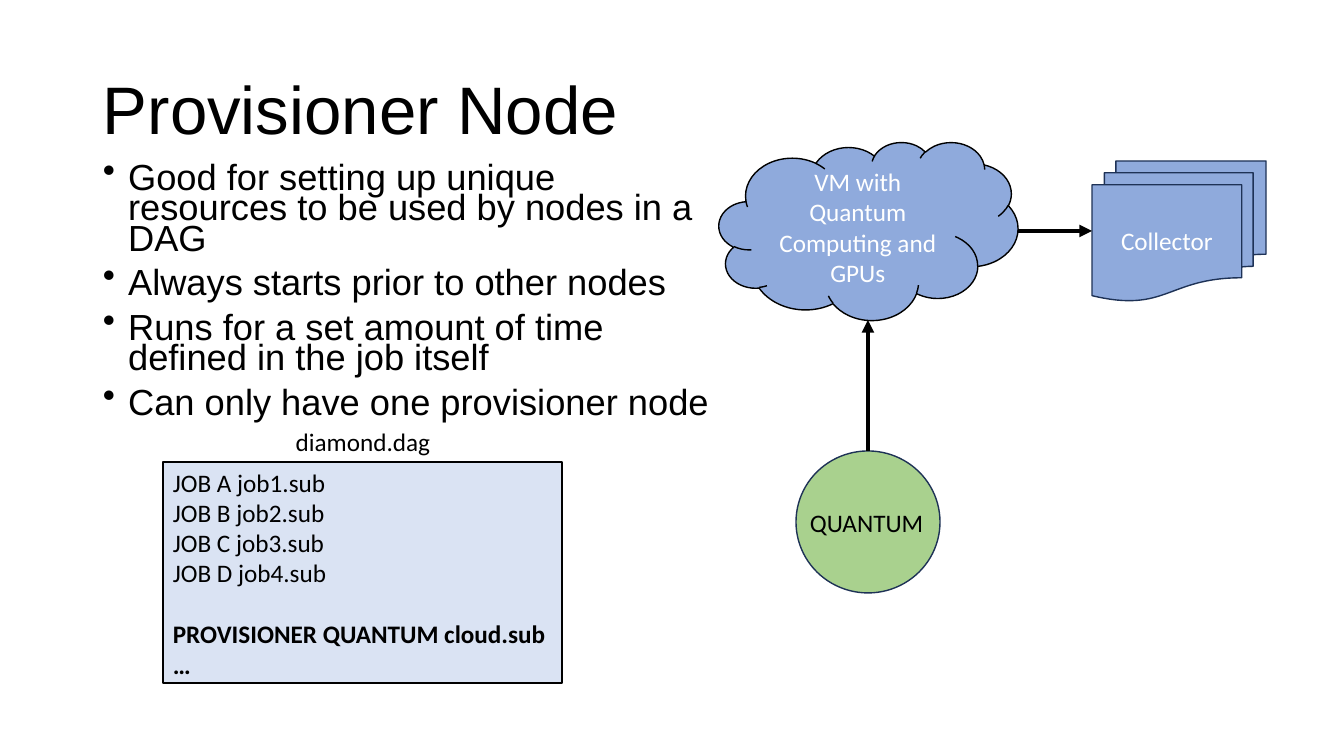
import pptx
import pptx.util
import pptx.dml.color
import pptx.enum.shapes
import pptx.enum.text
import pptx.oxml
import pptx.oxml.ns

SHAPE = pptx.enum.shapes.MSO_SHAPE
ALIGN = pptx.enum.text.PP_ALIGN
ANCHOR = pptx.enum.text.MSO_ANCHOR
Pt = pptx.util.Pt

# Content
TITLE = "Provisioner Node"
POINTS = [
    "Good for setting up unique resources to be used by nodes in a DAG",
    "Always starts prior to other nodes",
    "Runs for a set amount of time defined in the job itself",
    "Can only have one provisioner node",
]
FILE = "diamond.dag"
JOBS = ["JOB A job1.sub", "JOB B job2.sub", "JOB C job3.sub", "JOB D job4.sub"]
EXTRA = ["PROVISIONER QUANTUM cloud.sub", "…"]
CLOUD = "VM with Quantum Computing and GPUs"
STORE = "Collector"
NODE = "QUANTUM"

# Colours
BLACK, WHITE, NAVY = "000000", "FFFFFF", "1E3256"
BLUE, PALE, GREEN = "8FAADC", "DAE3F3", "A9D18E"

# Boxes in px: left, top, width, height
SIZE = (1344, 756)
TITLE_BOX = (93, 40, 1159, 146)
POINT_BOX = (93, 161, 633, 268)
CODE_BOX = (163, 462, 399, 221)
FILE_BOX = (237, 421, 252, 40)
CLOUD_BOX = (719, 142, 299, 178)
STORE_BOX = (1092, 161, 174, 140)
NODE_BOX = (796, 451, 144, 142)
LABEL_BOX = (800, 502, 143, 40)

SCALE = 914400 / 100.8


def emu(*px):
    return [round(v * SCALE) for v in px]


def color(code):
    return pptx.dml.color.RGBColor.from_string(code)


def write(shape, lines, size=18, face="Calibri", ink=BLACK,
          align=ALIGN.LEFT, anchor=ANCHOR.TOP):
    frame = shape.text_frame
    frame.word_wrap = True
    frame.vertical_anchor = anchor
    frame.text = "\n".join(lines)
    for para in frame.paragraphs:
        para.alignment = align
        para.font.size = Pt(size)
        para.font.name = face
        para.font.color.rgb = color(ink)
    return frame.paragraphs


def label(box, lines, **style):
    return write(slide.shapes.add_textbox(*emu(*box)), lines, **style)


def block(kind, box, fill, line):
    shape = slide.shapes.add_shape(kind, *emu(*box))
    shape.shadow.inherit = False
    shape.fill.solid()
    shape.fill.fore_color.rgb = color(fill)
    shape.line.color.rgb = color(line)
    shape.line.width = Pt(1)
    return shape


def child(parent, tag, **attrs):
    node = pptx.oxml.ns.qn(tag)
    item = parent.makeelement(node, attrs)
    parent.append(item)


def arrow(start, end):
    link = slide.shapes.add_connector(
        pptx.enum.shapes.MSO_CONNECTOR.STRAIGHT, *emu(*start, *end))
    link.line.color.rgb = color(BLACK)
    link.line.width = Pt(3)
    child(link.line._get_or_add_ln(), "a:tailEnd", type="triangle")
    child(link._element.spPr, "a:effectLst")
    return link


deck = pptx.Presentation()
deck.slide_width, deck.slide_height = emu(*SIZE)
slide = deck.slides.add_slide(deck.slide_layouts[6])

# Title and bullet points
label(TITLE_BOX, [TITLE], size=48, face="Arial", anchor=ANCHOR.MIDDLE)[0].line_spacing = 0.9
for i, para in enumerate(label(POINT_BOX, POINTS, size=25.9, face="Arial")):
    para.line_spacing = 0.7
    para.space_before = Pt(10 if i else 0)
    props = para._p.get_or_add_pPr()
    props.set("marL", "228600")
    props.set("indent", "-228600")
    bullet = props.makeelement(pptx.oxml.ns.qn("a:buChar"), {"char": "•"})
    props.insert_element_before(bullet, "a:tabLst", "a:defRPr", "a:extLst")

# Job file, with a line of space above the provisioner
code = write(block(SHAPE.RECTANGLE, CODE_BOX, PALE, BLACK), JOBS + EXTRA)
for para in code[len(JOBS):]:
    para.font.bold = True
code[len(JOBS)].space_before = Pt(22)
label(FILE_BOX, [FILE], align=ALIGN.CENTER)

# Cloud, collector and node
middle = dict(ink=WHITE, align=ALIGN.CENTER, anchor=ANCHOR.MIDDLE)
cloud = block(SHAPE.CLOUD, CLOUD_BOX, BLUE, BLACK)
write(cloud, [CLOUD], **middle)
store = block(SHAPE.FLOWCHART_MULTIDOCUMENT, STORE_BOX, BLUE, NAVY)
write(store, [STORE], **middle)
node = block(SHAPE.OVAL, NODE_BOX, GREEN, NAVY)
label(LABEL_BOX, [NODE])

# Arrows
x, y, w, h = CLOUD_BOX
level = STORE_BOX[1] + STORE_BOX[3] / 2
arrow((x + w, level), (STORE_BOX[0], level)).end_connect(store, 1)
axis = NODE_BOX[0] + NODE_BOX[2] / 2
arrow((axis, NODE_BOX[1]), (axis, y + h)).begin_connect(node, 0)

deck.save("out.pptx")
